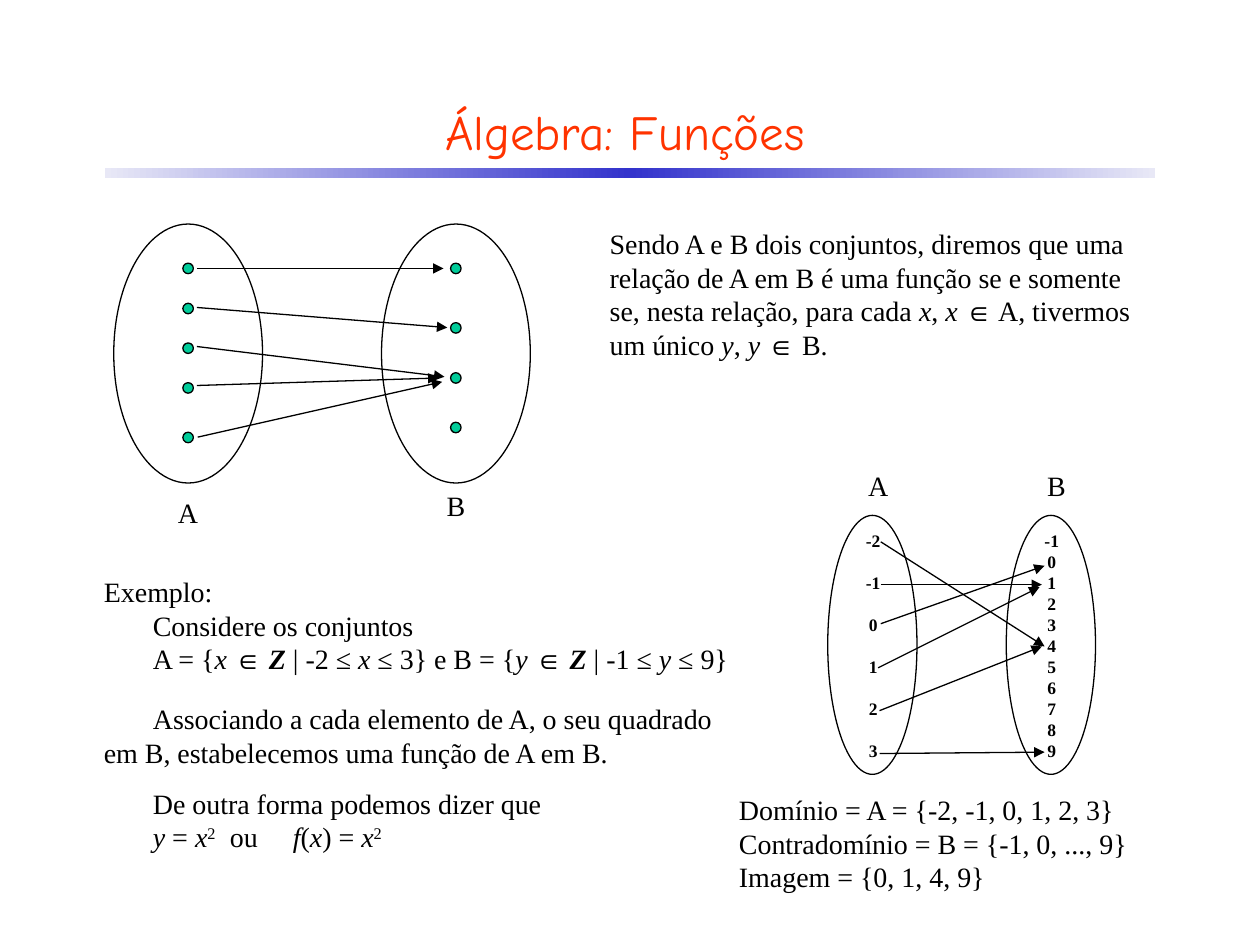
from copy import deepcopy
from pptx import Presentation
from pptx.dml.color import RGBColor
from pptx.enum import shapes, text
from pptx.oxml.ns import qn
from pptx.util import Pt
from lxml import etree

BLACK = RGBColor(0x00, 0x00, 0x00)
RED = RGBColor(0xFF, 0x33, 0x00)
BLUE = RGBColor(0x33, 0x33, 0xCC)
PALE = RGBColor(0xE8, 0xE8, 0xF6)
GREEN = RGBColor(0x00, 0xCC, 0x99)
SERIF = "Times New Roman"
LEFT, MID = text.PP_ALIGN.LEFT, text.PP_ALIGN.CENTER
INDENT = 28


def add_runs(para, line):
    """Fill a paragraph; _i.._ is italic, _b.._ bold italic, _s.._ superscript."""
    for k, part in enumerate(line.split("_")):
        if not part:
            continue
        run = para.add_run()
        if k % 2 == 0:
            run.text = part
            continue
        kind, run.text = part[0], part[1:]
        if kind == "s":
            run.font._element.set("baseline", "30000")
        else:
            run.font.italic = True
            run.font.bold = True if kind == "b" else None


def add_text(slide, box, lines, size=16, align=LEFT, bold=False, gap=0,
             indent=(), font=SERIF, color=BLACK):
    """Place lines of text; indent holds the numbers of the indented lines."""
    frame = slide.shapes.add_textbox(*map(Pt, box)).text_frame
    frame.word_wrap = True
    for k, line in enumerate(lines):
        para = frame.paragraphs[0] if k == 0 else frame.add_paragraph()
        add_runs(para, line)
        para.alignment = align
        para.line_spacing = Pt(size * 1.2)
        para.space_before = Pt(gap if k else 0)
        para.font.name, para.font.size = font, Pt(size)
        para.font.bold, para.font.color.rgb = bold, color
        if k in indent:
            para._p.get_or_add_pPr().set("indent", str(Pt(INDENT)))
    return frame


def add_oval(slide, x, y, w, h, fill=None):
    oval = slide.shapes.add_shape(shapes.MSO_SHAPE.OVAL, *map(Pt, (x, y, w, h)))
    oval.shadow.inherit = False
    if fill is None:
        oval.fill.background()
    else:
        oval.fill.solid()
        oval.fill.fore_color.rgb = fill
    oval.line.color.rgb, oval.line.width = BLACK, Pt(0.75)


def add_arrow(slide, x, y, ends):
    x1, y1, x2, y2 = ends
    line = slide.shapes.add_connector(
        shapes.MSO_CONNECTOR.STRAIGHT, Pt(x + x1), Pt(y + y1), Pt(x + x2), Pt(y + y2))
    line.line.color.rgb, line.line.width = BLACK, Pt(0.75)
    etree.SubElement(line.line._get_or_add_ln(), qn("a:tailEnd"), type="triangle")
    etree.SubElement(line._element.spPr, qn("a:effectLst"))


def add_title(slide, x, y, w, h):
    # Bar that fades towards both ends
    bar = slide.shapes.add_shape(
        shapes.MSO_SHAPE.RECTANGLE, Pt(x + 36), Pt(y + 48), Pt(600), Pt(6))
    bar.shadow.inherit = False
    bar.line.fill.background()
    bar.fill.gradient()
    bar.fill.gradient_angle = 0
    stops = bar.fill.gradient_stops
    stops[0].color.rgb, stops[1].color.rgb = PALE, BLUE
    first, mid = stops[0]._gs, stops[1]._gs
    last = deepcopy(first)
    mid.addnext(last)
    for stop, pos in ((first, 0), (mid, 50), (last, 100)):
        stop.set("pos", str(pos * 1000))

    frame = add_text(slide, (x, y, w, h), ["Álgebra: Funções"], 28, MID,
                     font="Comic Neue", color=RED)
    frame.paragraphs[0].line_spacing = None
    frame.vertical_anchor = text.MSO_ANCHOR.MIDDLE


def add_sets(slide, x, y, w, h, step, names, arrows):
    """Two ovals, their names and the arrows; names holds (text, x, y) of centres."""
    for k in range(2):
        add_oval(slide, x + k * step, y, w, h)
    for name, dx, dy in names:
        add_text(slide, (x + dx - 15, y + dy, 30, 26), [name], align=MID)
    for ends in arrows:
        add_arrow(slide, x, y, ends)


def add_dot_map(slide, x, y):
    w, step, dot = 85, 153, 6
    arrows = [(47.5, 25.4, 188.5, 25.4), (47.5, 47.7, 190.6, 59.2),
              (47.5, 70, 189, 87.3), (47.5, 92.3, 185.6, 88),
              (48, 121.8, 187.7, 90.2)]
    add_sets(slide, x, y, w, 148, step, [("A", 42.5, 151.4), ("B", 195.5, 147.8)], arrows)
    columns = [(25.4, 48.3, 71, 93.7, 122), (25.4, 59.4, 88, 116.3)]
    for k, column in enumerate(columns):
        for dy in column:
            add_oval(slide, x + k * step + (w - dot) / 2, y + dy - dot / 2, dot, dot, GREEN)


def add_square_map(slide, x, y):
    step = 102
    arrows = [(30.3, 15.1, 123.9, 74.9), (30.3, 39.6, 122.4, 39.6),
              (30.3, 61.9, 123.9, 28.8), (28.8, 87.1, 121, 41),
              (29.6, 111.6, 122.4, 74.9), (29.6, 136.1, 123.9, 135.3)]
    add_sets(slide, x, y, 51, 148, step, [("A", 28.9, -30.2), ("B", 130.7, -30.2)], arrows)
    for k, (values, gap) in enumerate([(range(-2, 4), 12), (range(-1, 10), 0)]):
        add_text(slide, (x + 11 + k * step, y + 5, 30, 139),
                 [str(v) for v in values], 10, MID, True, gap)


def add_example(slide, x, y, w):
    add_text(slide, (x, y, w + 14, 65), [
        "Exemplo:", "Considere os conjuntos",
        "A = {_ix _∈ _bZ_ | -2 ≤ _ix_ ≤ 3} e B = {_iy _∈ _bZ_ | -1 ≤ _iy_ ≤ 9}",
    ], indent=(1, 2))
    add_text(slide, (x, y + 72.7, w, 46), [
        "Associando a cada elemento de A, o seu quadrado em B, "
        "estabelecemos uma função de A em B."], indent=(0,))
    frame = add_text(slide, (x, y + 121, w, 46), [
        "De outra forma podemos dizer que",
        "_iy_ = _ix__s2_\tou\t_if_(_ix_) = _ix__s2_"], indent=(0, 1))
    # Tab stops for the two ways of writing the rule
    props = frame.paragraphs[1]._p.get_or_add_pPr()
    tabs = etree.Element(qn("a:tabLst"))
    for stop in (95.5, 155.5):
        etree.SubElement(tabs, qn("a:tab"), pos=str(Pt(stop)), algn="l")
    fonts = props.find(qn("a:defRPr"))
    fonts.addprevious(tabs)


def main():
    deck = Presentation()
    deck.slide_width, deck.slide_height = Pt(720), Pt(540)
    slide = deck.slides.add_slide(deck.slide_layouts[6])
    add_title(slide, 24, 48, 666, 54)
    add_dot_map(slide, 65, 128)
    # Definition
    add_text(slide, (341.3, 126, 325, 84), [
        "Sendo A e B dois conjuntos, diremos que uma relação de A em B é uma "
        "função se e somente se, nesta relação, para cada _ix_, _ix _∈ A, "
        "tivermos um único _iy_, _iy _∈ B."])
    add_example(slide, 52.3, 324.7, 376)
    add_square_map(slide, 473, 294.5)
    # Domain, codomain and image
    add_text(slide, (415.2, 449.3, 250, 65), [
        "Domínio = A = {-2, -1, 0, 1, 2, 3}",
        "Contradomínio = B = {-1, 0, ..., 9}",
        "Imagem = {0, 1, 4, 9}"])
    deck.save("out.pptx")


if __name__ == "__main__":
    main()
